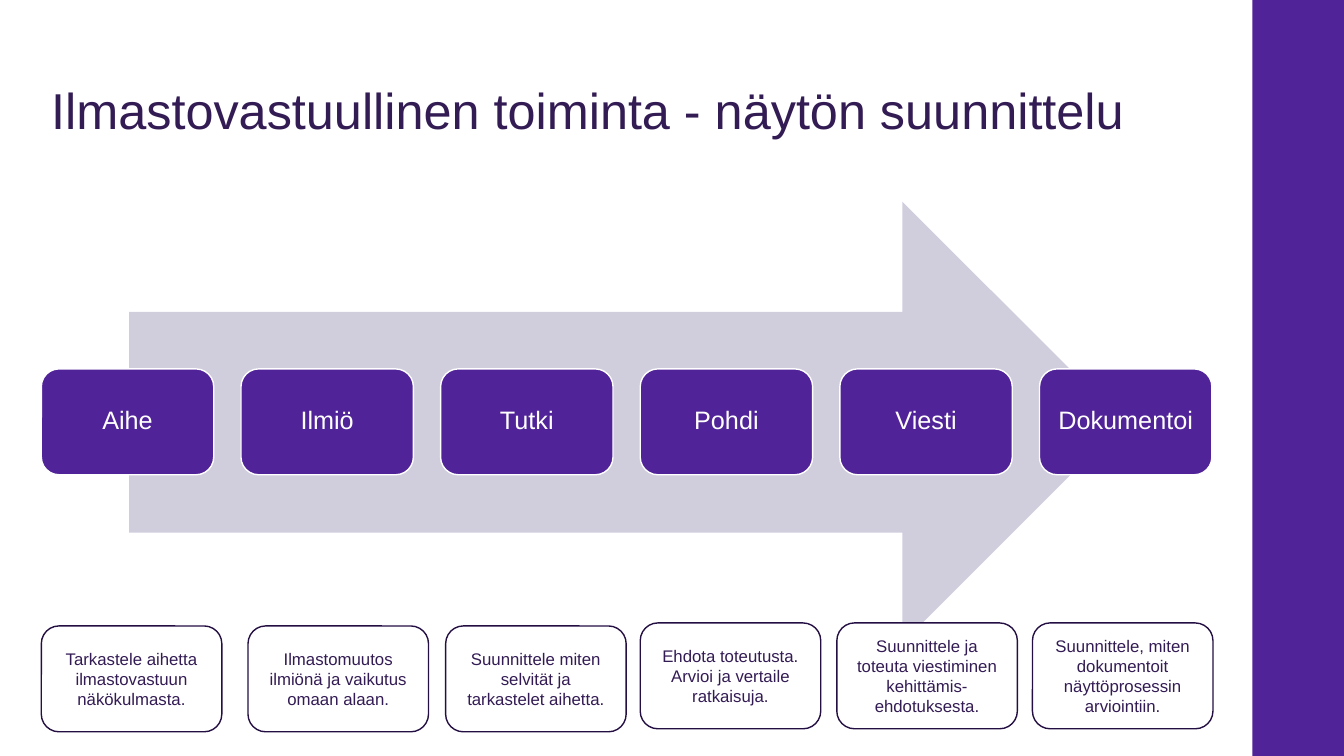
"""Build the slide on planning a climate-responsible skills demonstration."""
from dataclasses import dataclass

from pptx import Presentation
from pptx.dml.color import RGBColor
from pptx.enum.shapes import MSO_SHAPE as Shape
from pptx.enum.text import MSO_ANCHOR as Anchor, PP_ALIGN as Align
from pptx.shapes.autoshape import Shape as AutoShape
from pptx.slide import Slide
from pptx.util import Inches, Pt

PURPLE, INK, OUTLINE = "512398", "331C54", "240F43"
LAVENDER, WHITE = "D0CDDD", "FFFFFF"
STEP_LEFT, STEP_PITCH, STEP_TOP = 0.41, 1.98, 3.66
STEP_WIDTH, GUIDE_WIDTH, BOX_HEIGHT = 1.71, 1.79, 1.05


@dataclass(frozen=True)
class Step:
    name: str
    guide: str
    guide_left: float
    guide_top: float


STEPS = [
    Step("Aihe", "Tarkastele aihetta ilmastovastuun näkökulmasta.", 0.41, 6.21),
    Step("Ilmiö", "Ilmastomuutos ilmiönä ja vaikutus omaan alaan.", 2.46, 6.21),
    Step("Tutki", "Suunnittele miten selvität ja tarkastelet aihetta.", 4.42, 6.21),
    Step("Pohdi", "Ehdota toteutusta. Arvioi ja vertaile ratkaisuja.", 6.35, 6.18),
    Step("Viesti", "Suunnittele ja toteuta viestiminen kehittämis-ehdotuksesta.", 8.3, 6.18),
    Step("Dokumentoi", "Suunnittele, miten dokumentoit näyttöprosessin arviointiin.", 10.24, 6.18),
]


def color(value: str) -> RGBColor:
    return RGBColor.from_string(value)


def write(box: AutoShape, text: str, *, size: float, ink: str,
          align: Align = Align.CENTER, spacing: float = 1.0) -> None:
    frame = box.text_frame
    frame.word_wrap = True
    frame.vertical_anchor = Anchor.MIDDLE
    paragraph = frame.paragraphs[0]
    paragraph.text = text
    paragraph.alignment = align
    paragraph.line_spacing = spacing
    paragraph.font.name = "Arial"
    paragraph.font.size = Pt(size)
    paragraph.font.color.rgb = color(ink)


def draw(slide: Slide, kind: Shape, left: float, top: float, width: float,
         height: float, fill: str, line: str | None = None) -> AutoShape:
    shape = slide.shapes.add_shape(
        kind, Inches(left), Inches(top), Inches(width), Inches(height))
    shape.shadow.inherit = False
    shape.fill.solid()
    shape.fill.fore_color.rgb = color(fill)
    if line:
        shape.line.color.rgb = color(line)
        shape.line.width = Pt(1)
    else:
        shape.line.fill.background()
    return shape


def main() -> None:
    deck = Presentation()
    deck.slide_width, deck.slide_height = Inches(13.33), Inches(7.5)
    slide = deck.slides.add_slide(deck.slide_layouts[6])

    draw(slide, Shape.RECTANGLE, 12.42, 0, 0.91, 7.5, PURPLE)
    title = slide.shapes.add_textbox(
        Inches(0.41), Inches(0.4), Inches(11.6), Inches(1.45))
    write(title, "Ilmastovastuullinen toiminta - näytön suunnittelu",
          size=36, ink=INK, align=Align.LEFT, spacing=0.9)
    draw(slide, Shape.RIGHT_ARROW, 1.28, 2, 9.86, 4.38, LAVENDER)

    for index, step in enumerate(STEPS):
        name = draw(slide, Shape.ROUNDED_RECTANGLE, STEP_LEFT + index * STEP_PITCH,
                    STEP_TOP, STEP_WIDTH, BOX_HEIGHT, PURPLE, WHITE)
        write(name, step.name, size=18, ink=WHITE, spacing=0.9)
        guide = draw(slide, Shape.ROUNDED_RECTANGLE, step.guide_left,
                     step.guide_top, GUIDE_WIDTH, BOX_HEIGHT, WHITE, OUTLINE)
        write(guide, step.guide, size=12, ink=INK)

    deck.save("out.pptx")


if __name__ == "__main__":
    main()
